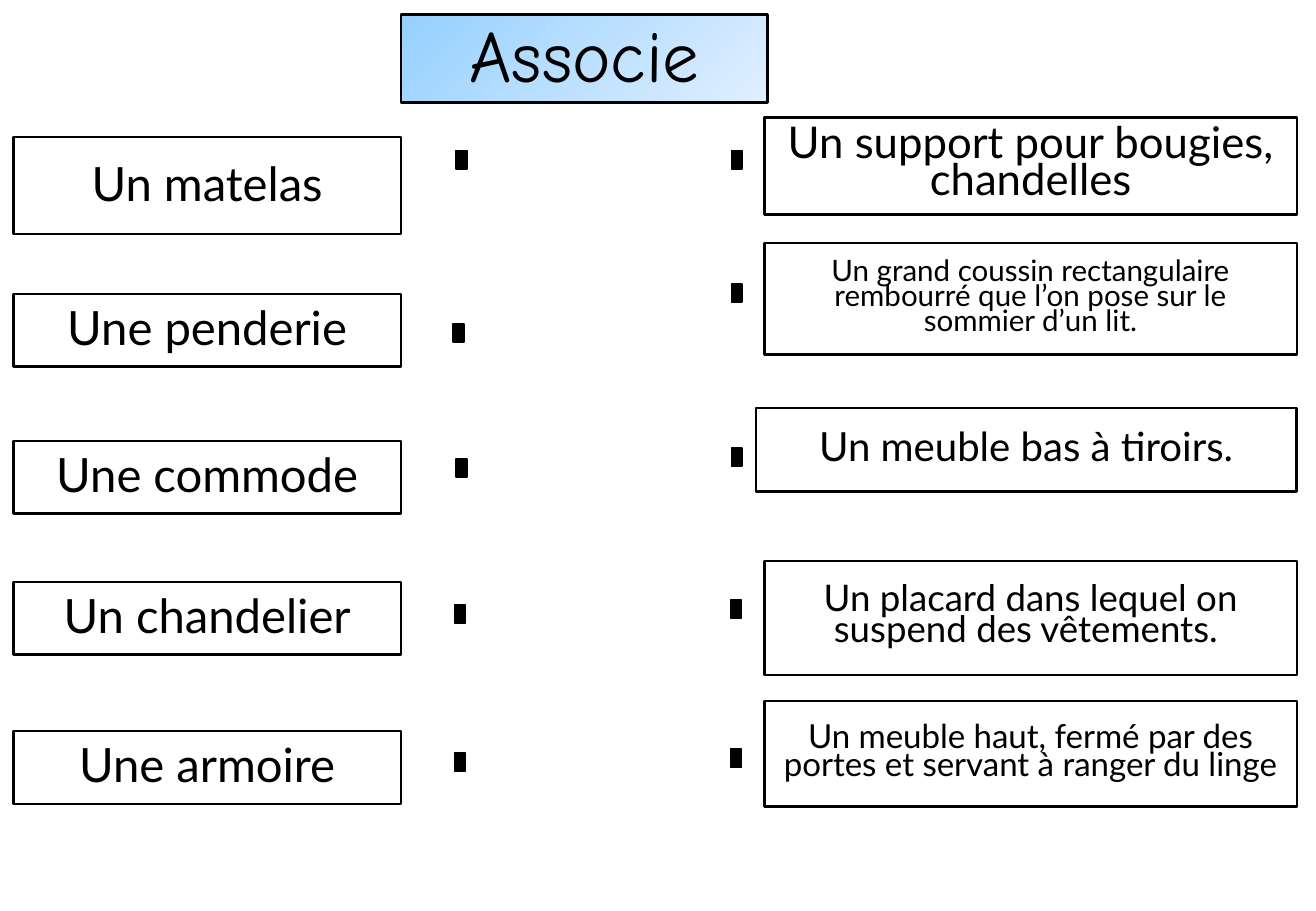
from pptx import Presentation
from pptx.dml.color import RGBColor
from pptx.enum.shapes import MSO_SHAPE
from pptx.enum.text import MSO_ANCHOR, PP_ALIGN
from pptx.util import Cm, Pt

RECTANGLE = MSO_SHAPE.RECTANGLE
CENTER = PP_ALIGN.CENTER
MIDDLE = MSO_ANCHOR.MIDDLE
BOTTOM = MSO_ANCHOR.BOTTOM

WORD_LEFT, WORD_WIDTH = 0.28, 8.1
WORDS = [
    ("Un matelas", 2.87, 2.03),
    ("Une penderie", 6.15, 1.52),
    ("Une commode", 9.22, 1.52),
    ("Un chandelier", 12.17, 1.52),
    ("Une armoire", 15.29, 1.52),
]
DEFINITIONS = [
    ("Un support pour bougies, chandelles", (15.98, 2.46, 11.13, 2.03), 25.9, 0.7),
    ("Un grand coussin rectangulaire rembourré que l’on pose sur le sommier d’un lit.",
     (15.98, 5.08, 11.13, 2.34), 17.5, 0.7),
    ("Un meuble bas à tiroirs.", (15.8, 8.53, 11.3, 1.75), 23.8, 0.8),
    ("Un placard dans lequel on suspend des vêtements. ", (15.98, 11.73, 11.13, 2.39), 21.7, 0.7),
    ("Un meuble haut, fermé par des portes et servant à ranger du linge",
     (15.98, 14.66, 11.13, 2.21), 19.6, 0.7),
]
WORD_DOTS = [(9.53, 3.15), (9.47, 6.78), (9.53, 9.6), (9.5, 12.65), (9.5, 15.75)]
DEFINITION_DOTS = [(15.29, 3.15), (15.29, 5.94), (15.29, 9.37), (15.27, 12.55), (15.27, 15.67)]


def color(value):
    return RGBColor.from_string(value)


def apply(target, values):
    for name, value in values.items():
        setattr(target, name, value)


class MatchingSheet:
    ink = "000000"
    font = "Lato"
    title_font = "Comic Neue"
    gradient = ("96D0FF", "E0EFFF")
    dot_size = (0.23, 0.38)

    def __init__(self, slide):
        self.slide = slide

    def rectangle(self, box, line_width):
        shape = self.slide.shapes.add_shape(RECTANGLE, *map(Cm, box))
        shape.shadow.inherit = False
        shape.fill.background()
        shape.line.color.rgb = color(self.ink)
        shape.line.width = Pt(line_width)
        return shape

    def dot(self, left, top):
        shape = self.rectangle((left, top, *self.dot_size), 1)
        shape.fill.solid()
        shape.fill.fore_color.rgb = color(self.ink)

    def label(self, text, box, size, spacing, before=10, font=font, anchor=MIDDLE):
        shape = self.rectangle(box, 1.5)
        apply(shape.text_frame, {"word_wrap": True, "vertical_anchor": anchor})
        paragraph = shape.text_frame.paragraphs[0]
        apply(paragraph, {"alignment": CENTER, "line_spacing": spacing, "space_before": Pt(before)})
        run = paragraph.add_run()
        run.text = text
        apply(run.font, {"name": font, "size": Pt(size)})
        run.font.color.rgb = color(self.ink)
        return shape

    def title(self, text, box):
        shape = self.label(text, box, 43.2, 0.8, 0, self.title_font, BOTTOM)
        shape.fill.gradient()
        shape.fill.gradient_angle = 315
        for stop, value in zip(shape.fill.gradient_stops, self.gradient):
            stop.color.rgb = color(value)


def main():
    presentation = Presentation()
    apply(presentation, {"slide_width": Cm(27.51), "slide_height": Cm(19.05)})
    sheet = MatchingSheet(presentation.slides.add_slide(presentation.slide_layouts[6]))
    for text, box, size, spacing in DEFINITIONS:
        sheet.label(text, box, size, spacing)
    for left, top in WORD_DOTS + DEFINITION_DOTS:
        sheet.dot(left, top)
    for text, top, height in WORDS:
        sheet.label(text, (WORD_LEFT, top, WORD_WIDTH, height), 28, 0.9)
    sheet.title("Associe", (8.38, 0.3, 7.67, 1.85))
    presentation.save("out.pptx")


if __name__ == "__main__":
    main()
